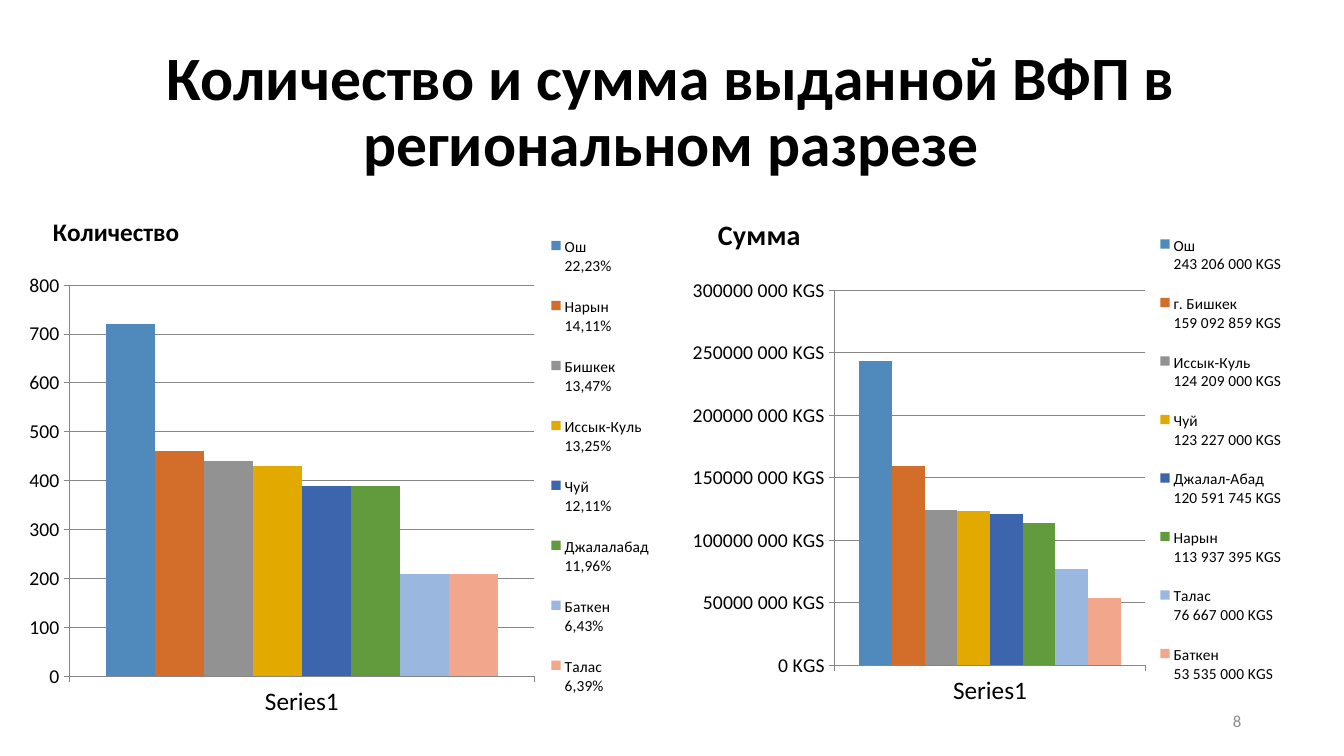
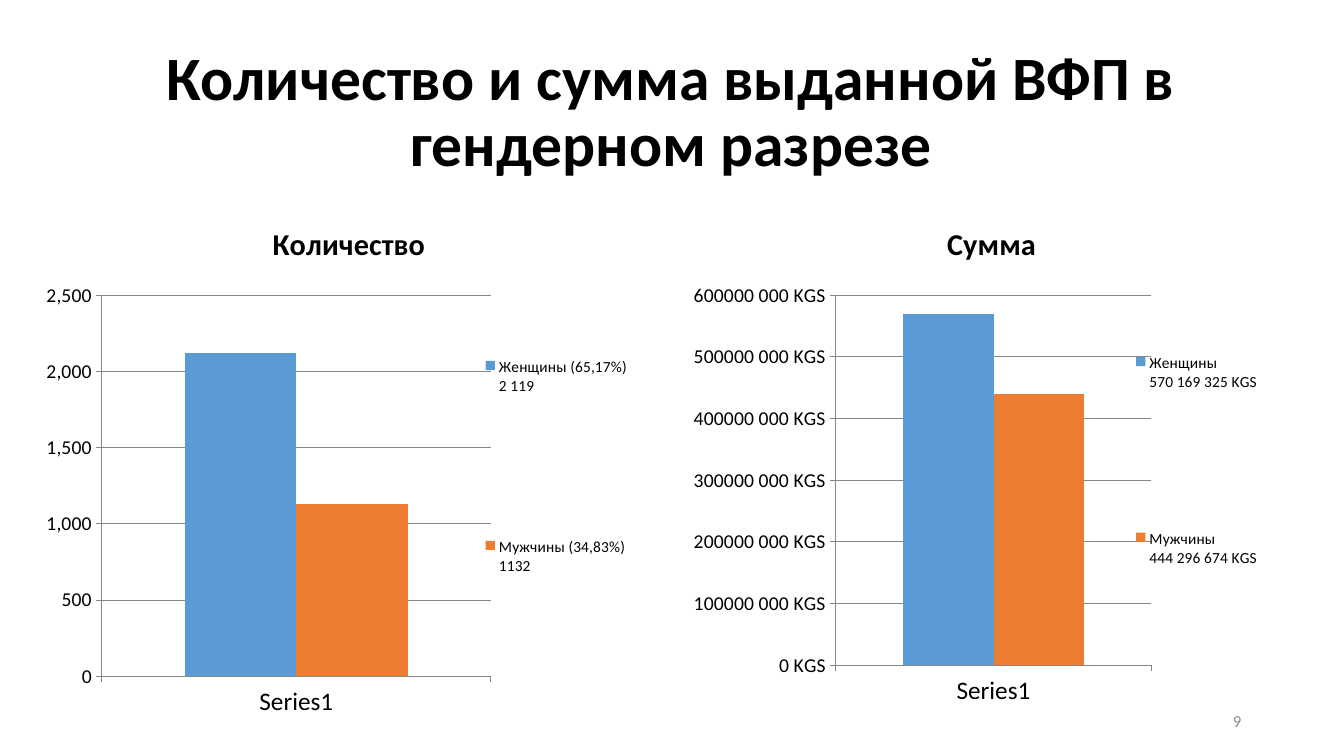
from dataclasses import dataclass
from typing import NamedTuple

from lxml.etree import SubElement
from pptx import Presentation
from pptx.chart.chart import Chart
from pptx.chart.data import CategoryChartData
from pptx.dml.color import RGBColor
from pptx.enum.chart import XL_CHART_TYPE, XL_LEGEND_POSITION, XL_TICK_MARK
from pptx.enum.text import MSO_ANCHOR, PP_ALIGN
from pptx.oxml.ns import qn
from pptx.slide import Slide
from pptx.util import Inches, Pt

FONT = "Calibri"
BLACK = RGBColor(0x00, 0x00, 0x00)
GRAY = RGBColor(0x8C, 0x8C, 0x8C)
LINE = RGBColor(0x86, 0x86, 0x86)
AREAS = [RGBColor.from_string(c) for c in (
    "508ABD", "D26E2A", "929292", "E2AA00",
    "3D65AD", "629A3E", "9AB7E0", "F2A78C")]
SEXES = [RGBColor(0x5B, 0x9B, 0xD5), RGBColor(0xED, 0x7D, 0x31)]
KGS = r"#\ ##0\ [$KGS]"
MILLION = 1_000_000


class Box(NamedTuple):
    """Place on the slide, in inches."""
    left: float
    top: float
    width: float = 0
    height: float = 0


TITLE = Box(0.91, 0.4, 11.5, 1.45)
NUMBER = Box(9.41, 6.95, 3, 0.4)


class Bar(NamedTuple):
    name: str
    note: str
    value: int


@dataclass
class Graph:
    title: str
    size: float
    form: str
    frame: Box
    head: Box
    plot: Box
    key: Box
    bars: list[Bar]
    tints: list[RGBColor]


@dataclass
class Page:
    title: str
    number: int
    graphs: list[Graph]


PAGES = [
    Page("Количество и сумма выданной ВФП в региональном разрезе", 8, [
        Graph("Количество", 18, "0", Box(0.16, 2, 6.42, 5.22),
              Box(0.48, 2.08), Box(0.69, 2.83, 4.61, 3.88),
              Box(5.37, 2.14, 1.17, 4.98), [
                  Bar("Ош", "22,23%", 720),
                  Bar("Нарын", "14,11%", 460),
                  Bar("Бишкек", "13,47%", 440),
                  Bar("Иссык-Куль", "13,25%", 430),
                  Bar("Чуй", "12,11%", 390),
                  Bar("Джалалабад", "11,96%", 390),
                  Bar("Баткен", "6,43%", 210),
                  Bar("Талас", "6,39%", 210)], AREAS),
        Graph("Сумма", 20, KGS, Box(6.75, 2, 6.12, 5.1),
              Box(7.07, 2.08), Box(8.28, 2.88, 3.08, 3.72),
              Box(11.41, 2.14, 1.4, 4.85), [
                  Bar("Ош", "243 206 000 KGS", 243 * MILLION),
                  Bar("г. Бишкек", "159 092 859 KGS", 159 * MILLION),
                  Bar("Иссык-Куль", "124 209 000 KGS", 124 * MILLION),
                  Bar("Чуй", "123 227 000 KGS", 123 * MILLION),
                  Bar("Джалал-Абад", "120 591 745 KGS", 121 * MILLION),
                  Bar("Нарын", "113 937 395 KGS", 114 * MILLION),
                  Bar("Талас", "76 667 000 KGS", 77 * MILLION),
                  Bar("Баткен", "53 535 000 KGS", 54 * MILLION)], AREAS)]),
    Page("Количество и сумма выданной ВФП в гендерном разрезе", 9, [
        Graph("Количество", 21.6, "#,##0", Box(0.33, 2, 6.25, 5.22),
              Box(2.65, 2.15), Box(1.01, 2.93, 3.86, 3.78),
              Box(4.72, 2.14, 1.6, 4.98), [
                  Bar("Женщины (65,17%)", "2 119", 2120),
                  Bar("Мужчины (34,83%)", "1132", 1130)], SEXES),
        Graph("Сумма", 21.6, KGS, Box(6.75, 2, 6.17, 5.1),
              Box(9.34, 2.15), Box(8.29, 2.93, 3.13, 3.67),
              Box(11.17, 2.14, 1.4, 4.86), [
                  Bar("Женщины", "570 169 325 KGS", 570 * MILLION),
                  Bar("Мужчины", "444 296 674 KGS", 440 * MILLION)],
              SEXES)]),
]


def write(slide: Slide, box: Box, text: str, *, size: float,
          color: RGBColor, align: PP_ALIGN, bold: bool = False,
          space: float = 1) -> None:
    frame = slide.shapes.add_textbox(*map(Inches, box)).text_frame
    frame.word_wrap = True
    frame.vertical_anchor = MSO_ANCHOR.MIDDLE
    para = frame.paragraphs[0]
    para.text = text
    para.alignment = align
    para.line_spacing = space
    font = para.font
    font.name, font.size, font.bold = FONT, Pt(size), bold
    font.color.rgb = color


def place(chart: Chart, tag: str, index: int, box: Box, frame: Box) -> None:
    """Fix a chart part at a slide position."""
    part = chart.element.find(".//" + qn(tag))
    for old in part.findall(qn("c:layout")):
        part.remove(old)
    layout = SubElement(part, qn("c:layout"))
    part.insert(index, layout)
    manual = SubElement(layout, qn("c:manualLayout"))
    items = {"xMode": "edge", "yMode": "edge",
             "x": (box.left - frame.left) / frame.width,
             "y": (box.top - frame.top) / frame.height}
    if box.width:
        items |= {"w": box.width / frame.width,
                  "h": box.height / frame.height}
    if tag == "c:plotArea":
        items = {"layoutTarget": "inner"} | items
    for name, value in items.items():
        SubElement(manual, qn("c:" + name)).set("val", str(value))


def draw(slide: Slide, graph: Graph) -> None:
    data = CategoryChartData(number_format=graph.form)
    data.categories = ["Series1"]
    for bar in graph.bars:
        data.add_series(f"{bar.name}\n{bar.note}", [bar.value])
    chart = slide.shapes.add_chart(
        XL_CHART_TYPE.COLUMN_CLUSTERED, *map(Inches, graph.frame), data).chart
    chart.font.name, chart.font.size = FONT, Pt(18)
    chart.font.color.rgb = BLACK

    chart.has_title = True
    head = chart.chart_title.text_frame
    head.text = graph.title
    font = head.paragraphs[0].runs[0].font
    font.name, font.size, font.bold = FONT, Pt(graph.size), True
    font.color.rgb = BLACK

    chart.has_legend = True
    key = chart.legend
    key.position = XL_LEGEND_POSITION.RIGHT
    key.include_in_layout = False
    key.font.name, key.font.size = FONT, Pt(11)
    key.font.color.rgb = BLACK

    for axis in (chart.category_axis, chart.value_axis):
        axis.major_tick_mark = XL_TICK_MARK.OUTSIDE
        axis.format.line.color.rgb = LINE
    scale = chart.value_axis
    scale.has_major_gridlines = True
    scale.major_gridlines.format.line.color.rgb = LINE
    scale.minimum_scale = 0
    labels = scale.tick_labels
    labels.font.size = Pt(14)
    labels.number_format = graph.form
    labels.number_format_is_linked = False

    plot = chart.plots[0]
    plot.gap_width = 150
    plot.overlap = 0
    plot.vary_by_categories = False
    for series, tint in zip(plot.series, graph.tints):
        series.format.fill.solid()
        series.format.fill.fore_color.rgb = tint

    place(chart, "c:title", 1, graph.head, graph.frame)
    place(chart, "c:plotArea", 0, graph.plot, graph.frame)
    place(chart, "c:legend", 1, graph.key, graph.frame)


def main() -> None:
    deck = Presentation()
    deck.slide_width, deck.slide_height = Inches(13.33), Inches(7.5)
    for page in PAGES:
        slide = deck.slides.add_slide(deck.slide_layouts[6])
        write(slide, TITLE, page.title, size=44, color=BLACK,
              align=PP_ALIGN.CENTER, bold=True, space=0.9)
        write(slide, NUMBER, str(page.number), size=12, color=GRAY,
              align=PP_ALIGN.RIGHT)
        for graph in page.graphs:
            draw(slide, graph)
    deck.save("out.pptx")


if __name__ == "__main__":
    main()
